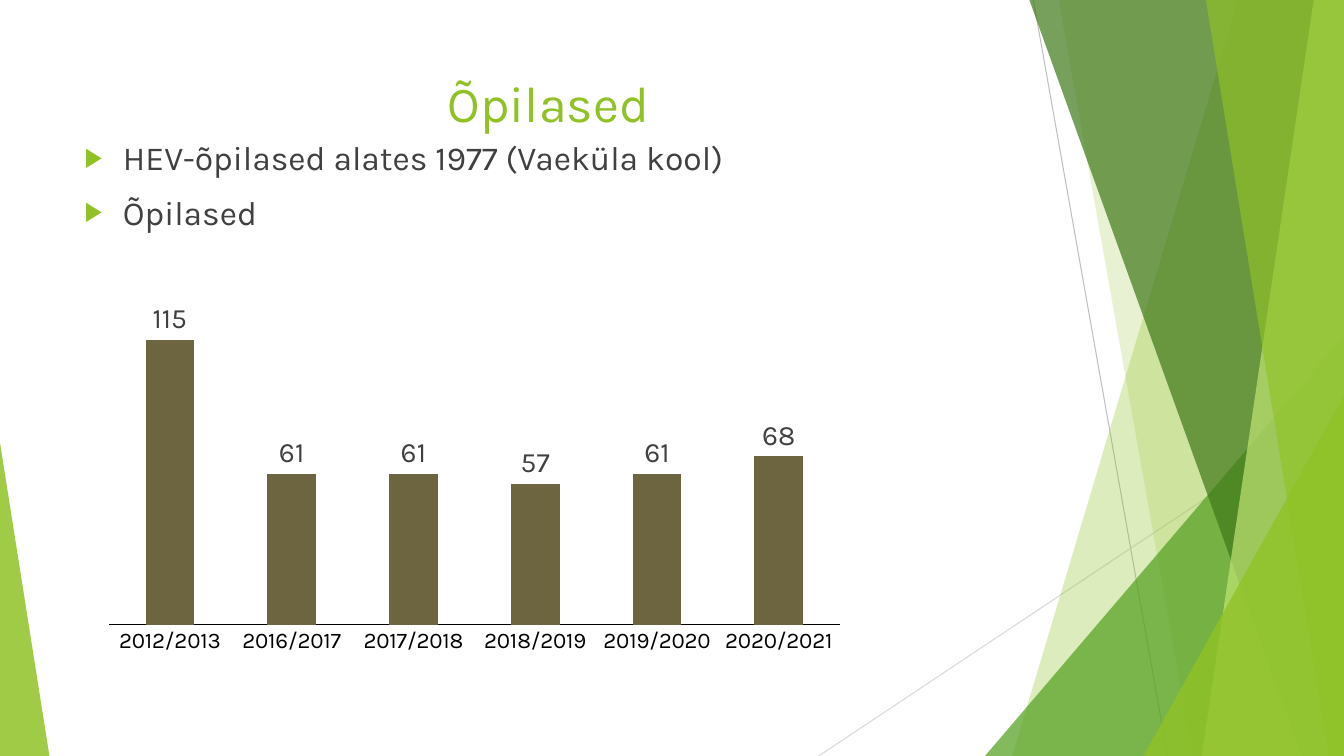
from lxml import etree
from pptx import Presentation, util as u
from pptx.chart.data import CategoryChartData
from pptx.dml.color import RGBColor
from pptx.enum import chart as ch, shapes, text
from pptx.oxml import parse_xml
from pptx.oxml.ns import nsdecls, qn

C = {"lime": "90C226", "green": "54A021", "forest": "3F7819", "pale": "C0E474",
     "grey": "BFBFBF", "silver": "D9D9D9", "text": "404040", "olive": "6D6540",
     "black": "000000", "white": "FFFFFF"}
FONT = "Karla"

prs = Presentation()
prs.slide_width, prs.slide_height = u.Inches(13.33), u.Inches(7.5)
s = prs.slides.add_slide(prs.slide_layouts[1])


def at(*shares):
    """Turn alternating x and y percentages of the slide into lengths."""
    sides = (prs.slide_width, prs.slide_height)
    return [round(v / 100 * sides[i % 2]) for i, v in enumerate(shares)]


def style(font, size, color):
    font.name, font.size = FONT, u.Pt(size)
    font.color.rgb = RGBColor.from_string(C[color])


# Thin background lines
for color, ends in (("grey", (76.89, 0, 86.87, 100)),
                    ("silver", (100, 53.73, 60.92, 100))):
    line = s.shapes.add_connector(shapes.MSO_CONNECTOR.STRAIGHT, *at(*ends))
    line.line.color.rgb = RGBColor.from_string(C[color])
    line.line.width = u.Pt(0.75)
    etree.SubElement(line.element.spPr, qn("a:effectLst"))

# Translucent facets: bands give top and bottom x of their slanted left side,
# triangles give left, right and top of their box and the apex position
facets = [("lime", 30, (92.12, 75.32)),
          ("lime", 20, (78.77, 88.75)),
          ("green", 72, (73.29, 100, 44.4, 1)),
          ("forest", 70, (76.59, 96.85)),
          ("pale", 70, (97.75, 89.42)),
          ("lime", 65, (89.72, 98.87)),
          ("lime", 80, (85.07, 100, 52.4, 1)),
          ("lime", 85, (0, 3.68, 58.53, 0))]
for color, alpha, form in facets:
    if len(form) == 2:
        top, bottom = form
        builder = s.shapes.build_freeform(*at(top, 0))
        builder.add_line_segments([at(100, 0), at(100, 100), at(bottom, 100)])
        sp = builder.convert_to_shape()
    else:
        left, right, top, apex = form
        sp = s.shapes.add_shape(shapes.MSO_SHAPE.ISOSCELES_TRIANGLE,
                                *at(left, top, right - left, 100 - top))
        sp.adjustments[0] = apex
    sp.shadow.inherit = False
    sp.line.fill.background()
    sp.fill.solid()
    sp.fill.fore_color.rgb = RGBColor.from_string(C[color])
    srgb = sp.element.spPr.find(".//" + qn("a:srgbClr"))
    etree.SubElement(srgb, qn("a:alpha"), val=str(alpha * 1000))

# Title and list, in front of the facets
title, body = s.shapes.title, s.placeholders[1]
for ph, box, words, size, color in (
        (title, (5.55, 8.93, 70.52, 13.73), "Õpilased", 36, "lime"),
        (body, (5.55, 17.47, 70.52, 70.67),
         "HEV-õpilased alates 1977 (Vaeküla kool)\nÕpilased", 24, "text")):
    ph.element.getparent().append(ph.element)
    ph.left, ph.top, ph.width, ph.height = at(*box)
    tf = ph.text_frame
    tf.text = words
    tf.word_wrap = True
    tf.auto_size = text.MSO_AUTO_SIZE.NONE
    tf.vertical_anchor = text.MSO_ANCHOR.TOP
    for p in tf.paragraphs:
        for r in p.runs:
            style(r.font, size, color)

title.text_frame.paragraphs[0].alignment = text.PP_ALIGN.CENTER
for p in body.text_frame.paragraphs:
    p.space_before = u.Pt(10)
    pPr = p.runs[0].font._element.getparent().getparent().get_or_add_pPr()
    pPr.set("marL", str(u.Inches(0.38)))
    pPr.set("indent", str(-u.Inches(0.38)))
    bullet_color = etree.SubElement(pPr, qn("a:buClr"))
    etree.SubElement(bullet_color, qn("a:srgbClr"), val=C["lime"])
    etree.SubElement(pPr, qn("a:buSzPct"), val="80000")
    etree.SubElement(pPr, qn("a:buChar"), char="▶")

# Pupils per school year
data = CategoryChartData()
data.categories = ["2012/2013", "2016/2017", "2017/2018",
                   "2018/2019", "2019/2020", "2020/2021"]
data.add_series("Series 1", (115, 61, 61, 57, 61, 68))
chart = s.shapes.add_chart(ch.XL_CHART_TYPE.COLUMN_CLUSTERED,
                           *at(6.38, 33.47, 57.84, 55.87), data).chart
chart.has_legend = chart.has_title = False
style(chart.font, 10, "black")

years, count = chart.category_axis, chart.value_axis
style(years.tick_labels.font, 16, "black")
years.major_tick_mark = ch.XL_TICK_MARK.NONE
years.format.line.color.rgb = RGBColor.from_string(C["black"])
years.format.line.width = u.Pt(0.75)
count.visible = count.has_major_gridlines = False
count.minimum_scale, count.maximum_scale = 0, 140

plot = chart.plots[0]
plot.gap_width, plot.overlap, plot.vary_by_categories = 150, -25, False
bars = plot.series[0].format.fill
bars.solid()
bars.fore_color.rgb = RGBColor.from_string(C["olive"])
plot.has_data_labels = True
labels = plot.data_labels
labels.show_value = True
labels.position = ch.XL_LABEL_POSITION.OUTSIDE_END
style(labels.font, 20, "text")

area = chart.element.find(".//" + qn("c:plotArea"))
for old in area.findall(qn("c:layout")):
    area.remove(old)
layout = etree.Element(qn("c:layout"))
manual = etree.SubElement(layout, qn("c:manualLayout"))
for tag, val in (("layoutTarget", "inner"), ("xMode", "edge"), ("yMode", "edge"),
                 ("x", 0.03), ("y", 0.06), ("w", 0.94), ("h", 0.82)):
    etree.SubElement(manual, qn("c:" + tag), val=str(val))
area.insert(0, layout)
chart.element.find(qn("c:chart")).addnext(parse_xml(
    f'<c:spPr {nsdecls("c", "a")}><a:solidFill><a:srgbClr val="{C["white"]}"/>'
    '</a:solidFill><a:ln><a:noFill/></a:ln></c:spPr>'))

prs.save("out.pptx")
